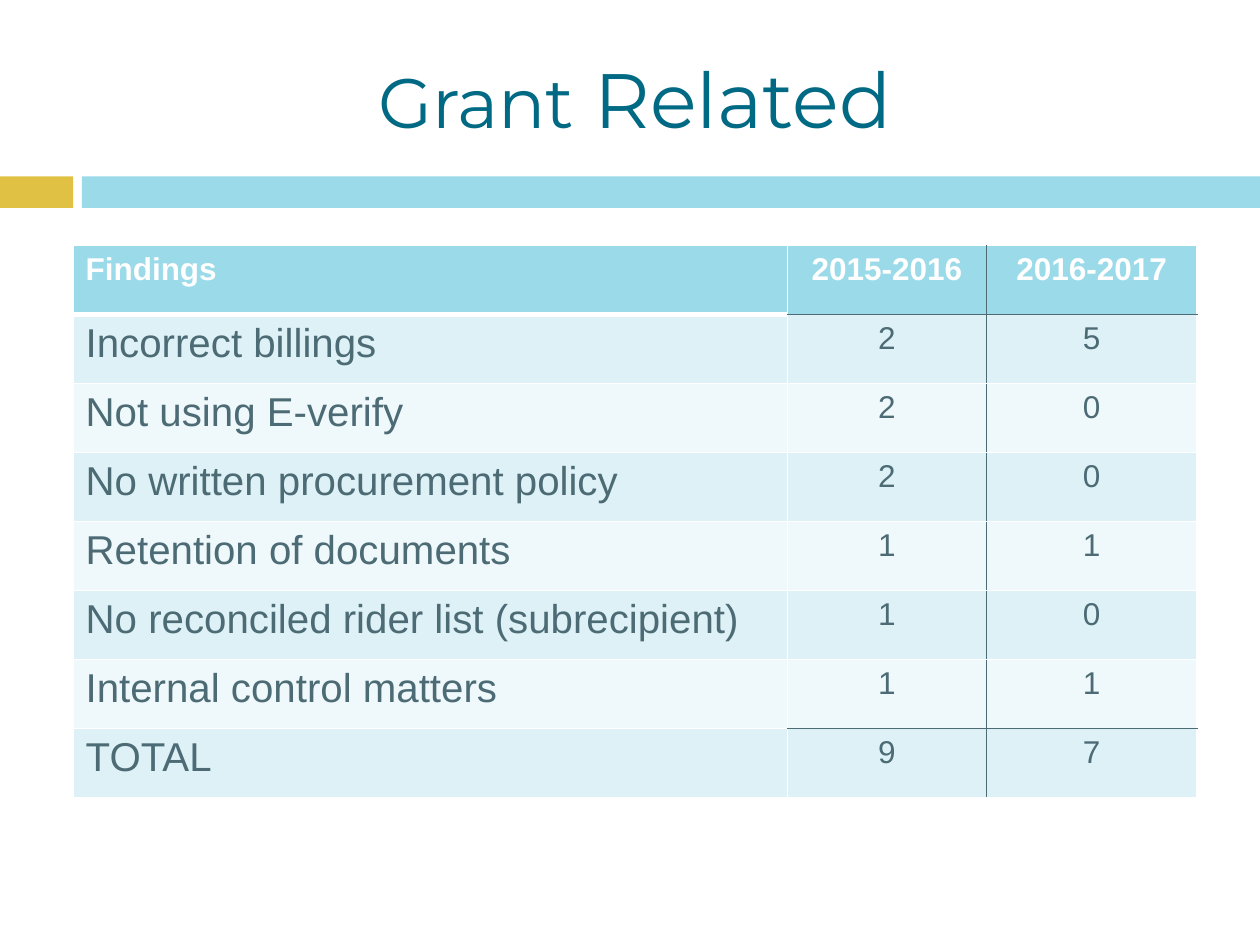
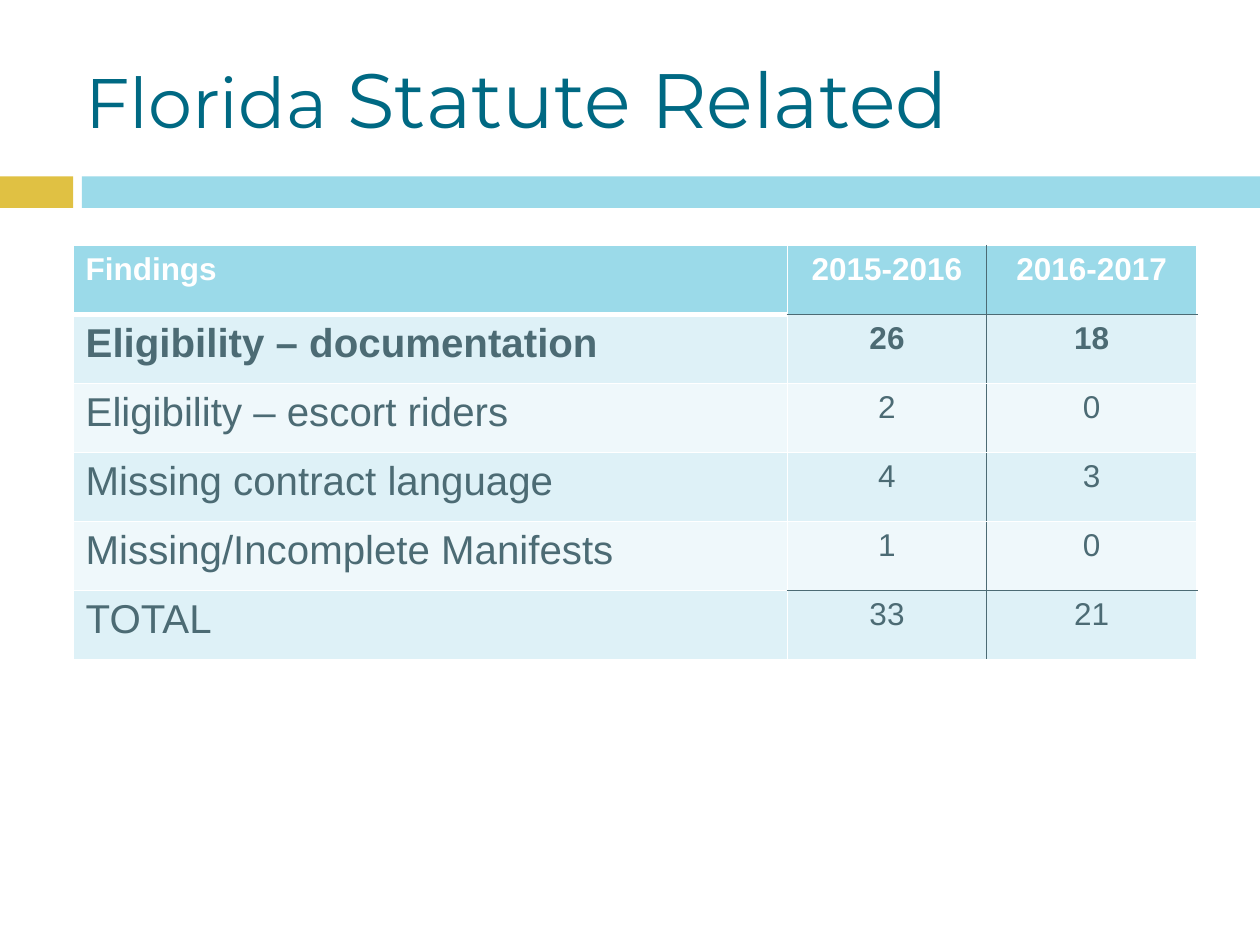
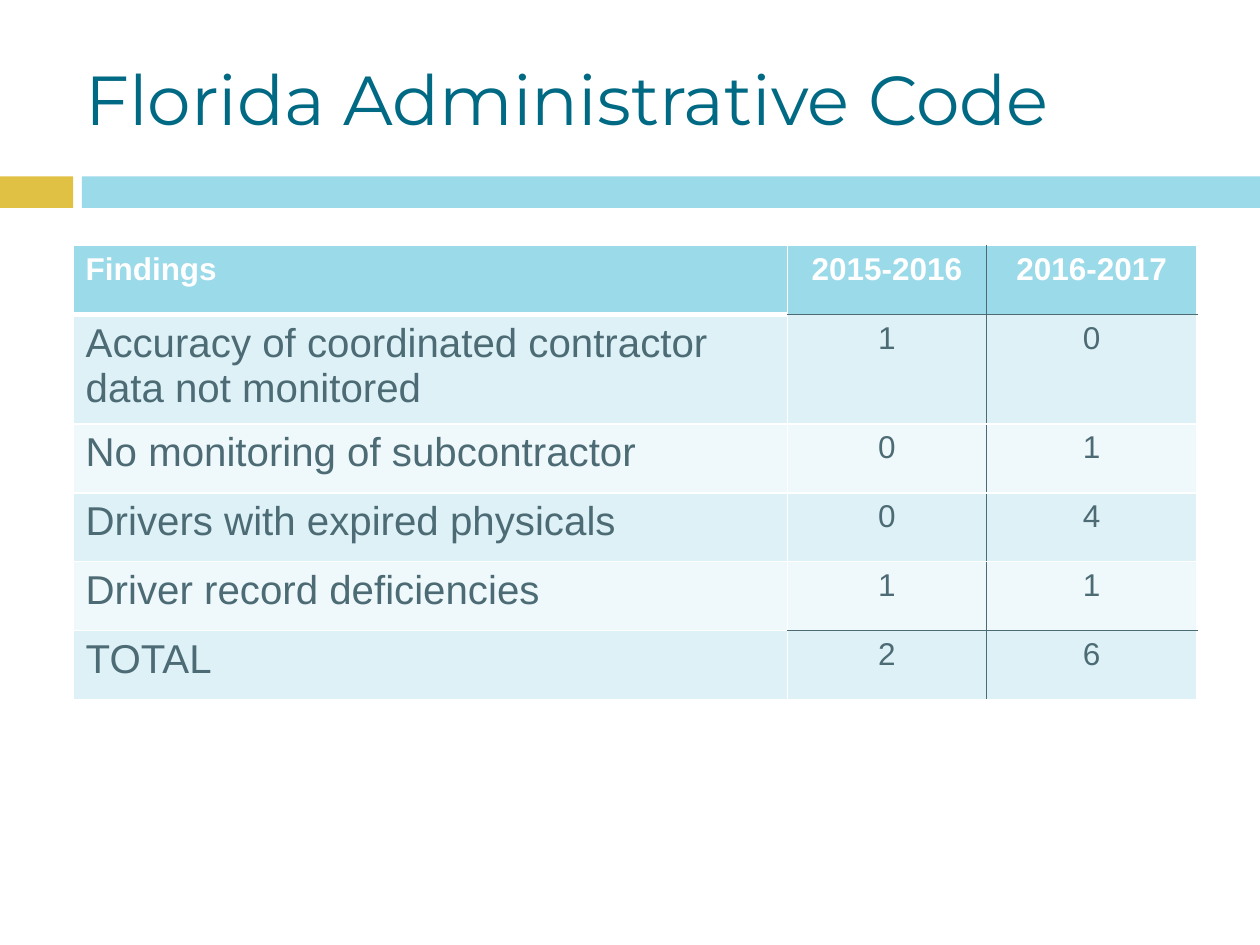
"""Build three slides that compare findings by category and year."""
import dataclasses

import lxml.etree
import pptx
import pptx.dml.color
import pptx.enum.shapes
import pptx.enum.text
import pptx.oxml.ns
import pptx.util

Inches = pptx.util.Inches
Pt = pptx.util.Pt
Align = pptx.enum.text.PP_ALIGN


@dataclasses.dataclass(frozen=True)
class Theme:
    title_font: str = "Montserrat"
    body_font: str = "Arial"
    title_color: str = "006983"
    accent: str = "E0C143"
    band: str = "9BDAE9"
    stripes: tuple = ("EFF8FB", "DEF1F7")
    ink: str = "4C6B74"
    white: str = "FFFFFF"
    title_small: float = 39.6
    title_medium: float = 40
    title_large: float = 44
    label_size: float = 23
    value_size: float = 18
    thin: float = 1
    thick: float = 3


THEME = Theme()
LEFT, WIDTH = 0.58, 8.92
COLUMN_WIDTHS = (5.67, 1.58, 1.67)
ROW_HEIGHT = 4.38 / 8
TALL_ROW_HEIGHT = 0.82
HEADER = ("Findings", "2015-2016", "2016-2017")


def rgb(color):
    return pptx.dml.color.RGBColor.from_string(color)


class FindingsDeck:
    def __init__(self, theme):
        self.theme = theme
        self.deck = pptx.Presentation()
        self.deck.slide_width, self.deck.slide_height = Inches(10), Inches(7.5)
        self.page = None

    def add_page(self):
        self.page = self.deck.slides.add_slide(self.deck.slide_layouts[6])
        self.bar(0, 0.58, self.theme.accent)
        self.bar(0.65, 9.35, self.theme.band)

    def bar(self, left, width, color):
        bar = self.page.shapes.add_shape(
            pptx.enum.shapes.MSO_SHAPE.RECTANGLE,
            Inches(left), Inches(1.4), Inches(width), Inches(0.25))
        bar.shadow.inherit = False
        bar.fill.solid()
        bar.fill.fore_color.rgb = rgb(color)
        bar.line.fill.background()

    def title(self, spans, align):
        box = self.page.shapes.add_textbox(
            Inches(LEFT), Inches(0.3), Inches(WIDTH), Inches(0.95))
        frame = box.text_frame
        frame.word_wrap = True
        frame.vertical_anchor = pptx.enum.text.MSO_ANCHOR.MIDDLE
        para = frame.paragraphs[0]
        para.alignment = align
        para.font.name = self.theme.title_font
        para.font.color.rgb = rgb(self.theme.title_color)
        for text, size in spans:
            span = para.add_run()
            span.text = text
            span.font.size = Pt(size)

    def border(self, cell, side, color, width):
        properties = cell._tc.get_or_add_tcPr()
        line = lxml.etree.SubElement(
            properties, pptx.oxml.ns.qn(f"a:ln{side}"), w=str(Pt(width)))
        fill = lxml.etree.SubElement(line, pptx.oxml.ns.qn("a:solidFill"))
        lxml.etree.SubElement(fill, pptx.oxml.ns.qn("a:srgbClr"), val=color)

    def vertical_rule(self, edge):
        return (self.theme.ink if edge == 2 else self.theme.white), self.theme.thin

    def horizontal_rule(self, edge, column, last_row):
        if column > 0 and edge in (1, last_row):
            return self.theme.ink, self.theme.thin
        is_header_edge = column == 0 and edge == 1
        return self.theme.white, self.theme.thick if is_header_edge else self.theme.thin

    def cell(self, table, row, column, text, bold):
        theme, last_row = self.theme, len(table.rows) - 1
        is_header = row == 0
        cell = table.cell(row, column)
        self.border(cell, "L", *self.vertical_rule(column))
        self.border(cell, "R", *self.vertical_rule(column + 1))
        self.border(cell, "T", *self.horizontal_rule(row, column, last_row))
        self.border(cell, "B", *self.horizontal_rule(row + 1, column, last_row))
        cell.fill.solid()
        cell.fill.fore_color.rgb = rgb(theme.band if is_header else theme.stripes[row % 2])
        cell.text = str(text)
        para = cell.text_frame.paragraphs[0]
        para.alignment = Align.CENTER if column else Align.LEFT
        is_label = column == 0 and not is_header
        para.font.name = theme.body_font
        para.font.size = Pt(theme.label_size if is_label else theme.value_size)
        para.font.bold = is_header or bold
        para.font.color.rgb = rgb(theme.white if is_header else theme.ink)

    def findings_table(self, findings, bold_row=None, tall_row=None):
        totals = [sum(values) for values in zip(*(finding[1:] for finding in findings))]
        rows = [HEADER, *findings, ("TOTAL", *totals)]
        table = self.page.shapes.add_table(
            len(rows), len(HEADER), Inches(LEFT), Inches(1.95),
            Inches(WIDTH), Inches(ROW_HEIGHT * len(rows))).table
        for column, width in zip(table.columns, COLUMN_WIDTHS):
            column.width = Inches(width)
        for row, texts in enumerate(rows):
            table.rows[row].height = Inches(TALL_ROW_HEIGHT if row == tall_row else ROW_HEIGHT)
            for column, text in enumerate(texts):
                self.cell(table, row, column, text, row == bold_row)


def main():
    builder = FindingsDeck(THEME)

    builder.add_page()
    builder.title([("Grant", THEME.title_medium), (" Related", THEME.title_large)], Align.CENTER)
    builder.findings_table([
        ("Incorrect billings", 2, 5),
        ("Not using E-verify", 2, 0),
        ("No written procurement policy", 2, 0),
        ("Retention of documents", 1, 1),
        ("No reconciled rider list (subrecipient)", 1, 0),
        ("Internal control matters", 1, 1),
    ])

    builder.add_page()
    builder.title(
        [("Florida", THEME.title_medium), (" Statute Related", THEME.title_large)], Align.LEFT)
    builder.findings_table([
        ("Eligibility – documentation", 26, 18),
        ("Eligibility – escort riders", 2, 0),
        ("Missing contract language", 4, 3),
        ("Missing/Incomplete Manifests", 1, 0),
    ], bold_row=1)

    builder.add_page()
    builder.title([("Florida Administrative Code", THEME.title_small)], Align.LEFT)
    builder.findings_table([
        ("Accuracy of coordinated contractor data not monitored", 1, 0),
        ("No monitoring of subcontractor", 0, 1),
        ("Drivers with expired physicals", 0, 4),
        ("Driver record deficiencies", 1, 1),
    ], tall_row=1)

    builder.deck.save("out.pptx")


if __name__ == "__main__":
    main()
